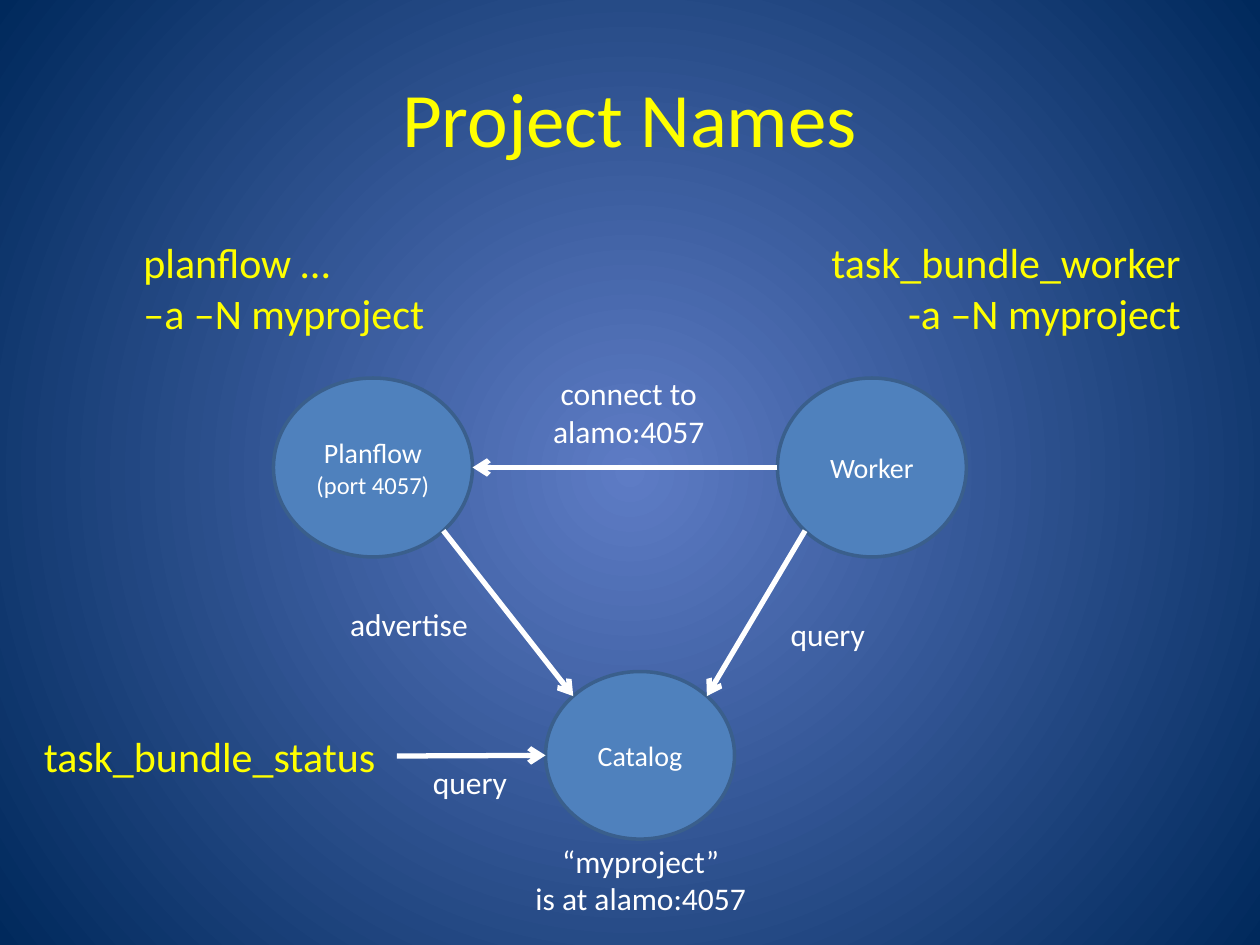
from lxml import etree
from pptx import Presentation
from pptx.dml.color import RGBColor
from pptx.enum import shapes, text
from pptx.oxml.ns import qn
from pptx.util import Inches, Pt

HUES = {"glow": "5E7CC5", "night": "00295C", "disc": "4F81BD",
        "rim": "3A5F8C", "pale": "FFFFFF", "loud": "FFFF00"}
TITLE = "Project Names"
# name: (left, top, width, height), lines, sizes
NODES = {
    "flow": ((2.17, 3, 1.58, 1.42), ["Planflow", "(port 4057)"], [16, 14]),
    "work": ((6.17, 3, 1.5, 1.42), ["Worker"], [16]),
    "cat": ((4.33, 5.33, 1.5, 1.33), ["Catalog"], [16]),
}
COMMANDS = [
    ((1.04, 1.83, 2.45, 0.91), ["planflow …", "–a –N myproject"], "LEFT"),
    ((6.42, 1.83, 3.05, 0.91), ["task_bundle_worker", "-a –N myproject"], "RIGHT"),
    ((0.25, 5.75, 2.9, 0.5), ["task_bundle_status"], "LEFT"),
]
LABELS = [
    ((4.28, 2.92, 1.42, 0.71), ["connect to", "alamo:4057"]),
    ((2.67, 4.75, 1.15, 0.4), ["advertise"]),
    ((6.17, 4.83, 0.8, 0.4), ["query"]),
    ((3.33, 6.01, 0.8, 0.4), ["query"]),
    ((4.14, 6.63, 1.89, 0.71), ["“myproject”", "is at alamo:4057"]),
]
# (node, site) at each end; None stands for the status command
ARROWS = [
    (("work", 2), ("flow", 6)),
    (("flow", 5), ("cat", 1)),
    (("work", 3), ("cat", 7)),
    (None, ("cat", 2)),
]
STATUS = (3.15, 6)
D = 0.5 ** 0.5
# The eight sites of an ellipse, anticlockwise from the top
SITES = [(0, -1), (-D, -D), (-1, 0), (-D, D), (0, 1), (D, D), (1, 0), (D, -D)]


def rgb(name):
    return RGBColor.from_string(HUES[name])


def write(frame, lines, sizes, hue="pale", align="CENTER", wrap=True):
    frame.word_wrap = wrap
    for i, line in enumerate(lines):
        para = frame.paragraphs[0] if i == 0 else frame.add_paragraph()
        para.alignment = getattr(text.PP_ALIGN, align)
        run = para.add_run()
        run.text = line
        run.font.name = "Calibri"
        run.font.size = Pt(sizes[min(i, len(sizes) - 1)])
        run.font.color.rgb = rgb(hue)


def paint(slide):
    """Fill the background with a glow spreading from the centre."""
    fill = slide.background.fill
    fill.gradient()
    for stop, name in zip(fill.gradient_stops, ("glow", "night")):
        stop.color.rgb = rgb(name)
    grad = slide.element.find(".//" + qn("a:gradFill"))
    grad.remove(grad.find(qn("a:lin")))
    way = etree.SubElement(grad, qn("a:path"), path="circle")
    etree.SubElement(way, qn("a:fillToRect"),
                     l="50000", t="50000", r="50000", b="50000")


def add_node(slide, box, lines, sizes):
    node = slide.shapes.add_shape(shapes.MSO_SHAPE.OVAL, *map(Inches, box))
    node.shadow.inherit = False
    node.fill.solid()
    node.fill.fore_color.rgb = rgb("disc")
    node.line.color.rgb = rgb("rim")
    node.line.width = Pt(2)
    node.text_frame.vertical_anchor = text.MSO_ANCHOR.MIDDLE
    write(node.text_frame, lines, sizes)
    return node


def add_note(slide, box, lines, size, **look):
    note = slide.shapes.add_textbox(*map(Inches, box))
    write(note.text_frame, lines, [size], wrap=False, **look)
    note.text_frame.auto_size = text.MSO_AUTO_SIZE.SHAPE_TO_FIT_TEXT


def spot(end):
    if end is None:
        return STATUS
    name, site = end
    x, y, w, h = NODES[name][0]
    dx, dy = SITES[site]
    return x + w / 2 * (1 + dx), y + h / 2 * (1 + dy)


def add_arrow(slide, nodes, start, stop):
    """Draw an arrow and join it to the ellipse sites, diagonal ones too."""
    ends = [Inches(v) for v in spot(start) + spot(stop)]
    arrow = slide.shapes.add_connector(shapes.MSO_CONNECTOR.STRAIGHT, *ends)
    arrow.line.color.rgb = rgb("pale")
    arrow.line.width = Pt(3)
    props = arrow.element.spPr
    etree.SubElement(props.find(qn("a:ln")), qn("a:tailEnd"), type="arrow")
    etree.SubElement(props, qn("a:effectLst"))
    joints = arrow.element.find(".//" + qn("p:cNvCxnSpPr"))
    for tag, end in (("a:stCxn", start), ("a:endCxn", stop)):
        if end:
            etree.SubElement(joints, qn(tag), id=str(nodes[end[0]].shape_id),
                             idx=str(end[1]))


def main():
    deck = Presentation()
    deck.slide_width, deck.slide_height = Inches(10), Inches(7.5)
    slide = deck.slides.add_slide(deck.slide_layouts[5])
    paint(slide)
    title = slide.shapes.title
    title.left, title.top, title.width, title.height = map(
        Inches, (0.5, 0.3, 9, 1.25))
    title.text_frame.vertical_anchor = text.MSO_ANCHOR.MIDDLE
    write(title.text_frame, [TITLE], [44], hue="loud")

    nodes = {name: add_node(slide, *node) for name, node in NODES.items()}
    for start, stop in ARROWS:
        add_arrow(slide, nodes, start, stop)
    for box, lines, align in COMMANDS:
        add_note(slide, box, lines, 24, hue="loud", align=align)
    for box, lines in LABELS:
        add_note(slide, box, lines, 18)
    deck.save("out.pptx")


if __name__ == "__main__":
    main()
